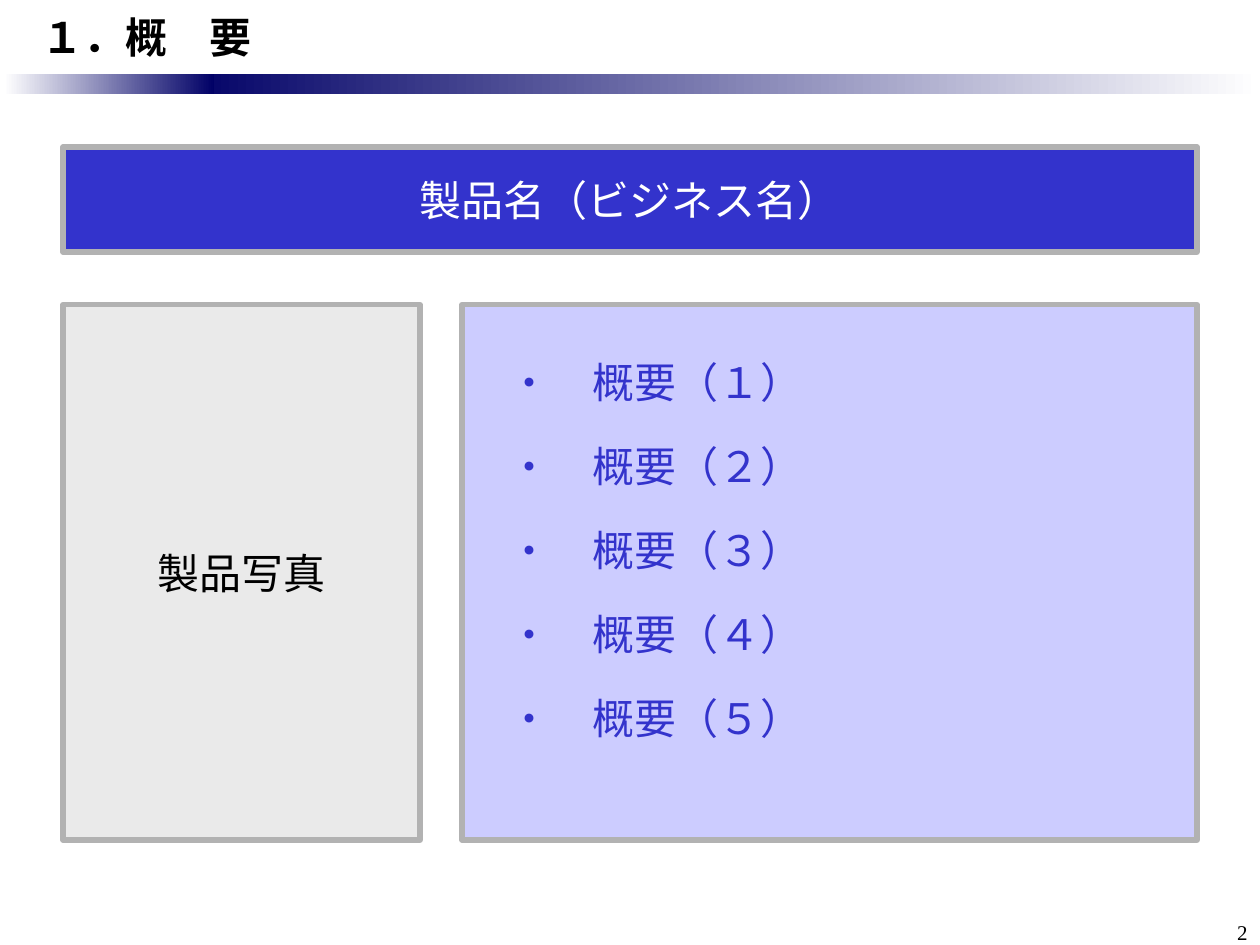
"""Build the product overview slide on a grid of 120 columns by 90 rows."""
from dataclasses import dataclass

from pptx import Presentation
from pptx import util as u
from pptx.dml.color import RGBColor
from pptx.enum import shapes, text
from pptx.oxml import xmlchemy
from pptx.oxml.ns import qn

CELL = u.Inches(1) / 12
COLUMNS, ROWS = 120, 90


@dataclass(frozen=True)
class Theme:
    black: str = "000000"
    white: str = "FFFFFF"
    navy: str = "000066"
    blue: str = "3333CC"
    lavender: str = "CCCCFF"
    light_gray: str = "EAEAEA"
    border: str = "B2B2B2"
    border_width: float = 3
    main_size: float = 24
    number_size: float = 12
    sans: str = "Noto Sans CJK JP"
    serif: str = "Times New Roman"


@dataclass(frozen=True)
class Area:
    column: float
    row: float
    columns: float
    rows: float

    def box(self) -> tuple[int, ...]:
        return tuple(round(n * CELL) for n in (self.column, self.row, self.columns, self.rows))


@dataclass(frozen=True)
class Bar:
    area: Area
    start: str
    end: str


@dataclass(frozen=True)
class Panel:
    area: Area
    words: str
    fill: str
    ink: str
    font: str
    wrap: bool


THEME = Theme()
LEFT, CENTER, RIGHT = text.PP_ALIGN.LEFT, text.PP_ALIGN.CENTER, text.PP_ALIGN.RIGHT
TOP, MIDDLE = text.MSO_ANCHOR.TOP, text.MSO_ANCHOR.MIDDLE
BARS = (
    Bar(Area(17, 7, 103, 2), THEME.navy, THEME.white),
    Bar(Area(0.4, 7, 20, 2), THEME.white, THEME.navy),
)
PANELS = (
    Panel(Area(6, 29, 34, 51), "製品写真", THEME.light_gray, THEME.black, THEME.serif, False),
    Panel(Area(6, 14, 108, 10), "製品名（ビジネス名）", THEME.blue, THEME.white, THEME.sans, True),
)
TITLE_AREA = Area(0, 0, COLUMNS, 7)
SUMMARY_AREA = Area(44, 29, 70, 51)
NUMBER_AREA = Area(113, 87, 7, 3)
SUMMARY = [f"・　概要（{digit}）" for digit in "１２３４５"]


def write(shape, lines: list[str], ink: str, *, font: str = THEME.sans,
          size: float = THEME.main_size, bold: bool = False, align=CENTER,
          anchor=MIDDLE, left: float = 0.1, top: float = 0.05, wrap: bool = True) -> None:
    """Fill a shape with evenly formatted paragraphs."""
    frame = shape.text_frame
    frame.text = "\n".join(lines)
    frame.auto_size = text.MSO_AUTO_SIZE.NONE
    frame.word_wrap = wrap
    frame.vertical_anchor = anchor
    frame.margin_left, frame.margin_top = u.Inches(left), u.Inches(top)
    frame.margin_right, frame.margin_bottom = u.Inches(0.1), u.Inches(0.05)
    for paragraph in frame.paragraphs:
        paragraph.alignment = align
        paragraph.space_before = u.Pt(0)
        paragraph.font.name = font
        paragraph.font.size = u.Pt(size)
        paragraph.font.bold = bold
        paragraph.font.color.rgb = RGBColor.from_string(ink)
        for run in paragraph.runs:
            east_asian = xmlchemy.OxmlElement("a:ea")
            east_asian.set("typeface", THEME.sans)
            run.font._element.append(east_asian)


def place(shape, area: Area) -> None:
    """Move a placeholder to its grid area."""
    shape.left, shape.top, shape.width, shape.height = area.box()


def paint(shape, fill: str) -> None:
    """Give a shape its solid fill and gray border."""
    shape.fill.solid()
    shape.fill.fore_color.rgb = RGBColor.from_string(fill)
    shape.line.color.rgb = RGBColor.from_string(THEME.border)
    shape.line.width = u.Pt(THEME.border_width)


def add_rectangle(slide, area: Area):
    """Add a rectangle without a shadow."""
    rectangle = slide.shapes.add_shape(shapes.MSO_SHAPE.RECTANGLE, *area.box())
    rectangle.shadow.inherit = False
    return rectangle


def draw_bar(slide, bar: Bar) -> None:
    """Draw one half of the gradient rule under the title."""
    rule = add_rectangle(slide, bar.area)
    rule.line.fill.background()
    rule.fill.gradient()
    rule.fill.gradient_angle = 0
    for stop, color, position in zip(rule.fill.gradient_stops, (bar.start, bar.end), (0, 1)):
        stop.color.rgb = RGBColor.from_string(color)
        stop.position = position


def draw_panel(slide, panel: Panel) -> None:
    """Draw a bordered panel with centred words."""
    frame = add_rectangle(slide, panel.area)
    paint(frame, panel.fill)
    write(frame, [panel.words], panel.ink, font=panel.font, wrap=panel.wrap)


def draw_summary(summary) -> None:
    """Format the body placeholder as the summary list."""
    place(summary, SUMMARY_AREA)
    paint(summary, THEME.lavender)
    write(summary, SUMMARY, THEME.blue, align=LEFT, anchor=TOP, left=0.37, top=0.37)
    for paragraph in summary.text_frame.paragraphs:
        paragraph.line_spacing = u.Pt(32)
        paragraph.space_after = u.Pt(16)
        properties = paragraph._p.get_or_add_pPr()
        properties.set("marL", "0")
        properties.set("indent", "0")
        properties.insert_element_before(
            xmlchemy.OxmlElement("a:buNone"), "a:tabLst", "a:defRPr", "a:extLst")
        assert properties.find(qn("a:buNone")) is not None


def main() -> None:
    """Build and save the slide."""
    deck = Presentation()
    deck.slide_width, deck.slide_height = round(COLUMNS * CELL), round(ROWS * CELL)
    slide = deck.slides.add_slide(deck.slide_layouts[1])
    for bar in BARS:
        draw_bar(slide, bar)
    title, summary = slide.shapes.title, slide.placeholders[1]
    place(title, TITLE_AREA)
    write(title, ["１．概　要"], THEME.black, bold=True, align=LEFT, left=0.33)
    draw_summary(summary)
    for panel in PANELS:
        draw_panel(slide, panel)
    number = slide.shapes.add_textbox(*NUMBER_AREA.box())
    write(number, ["2"], THEME.black, font=THEME.serif, size=THEME.number_size,
          align=RIGHT, anchor=TOP)
    deck.save("out.pptx")


if __name__ == "__main__":
    main()
